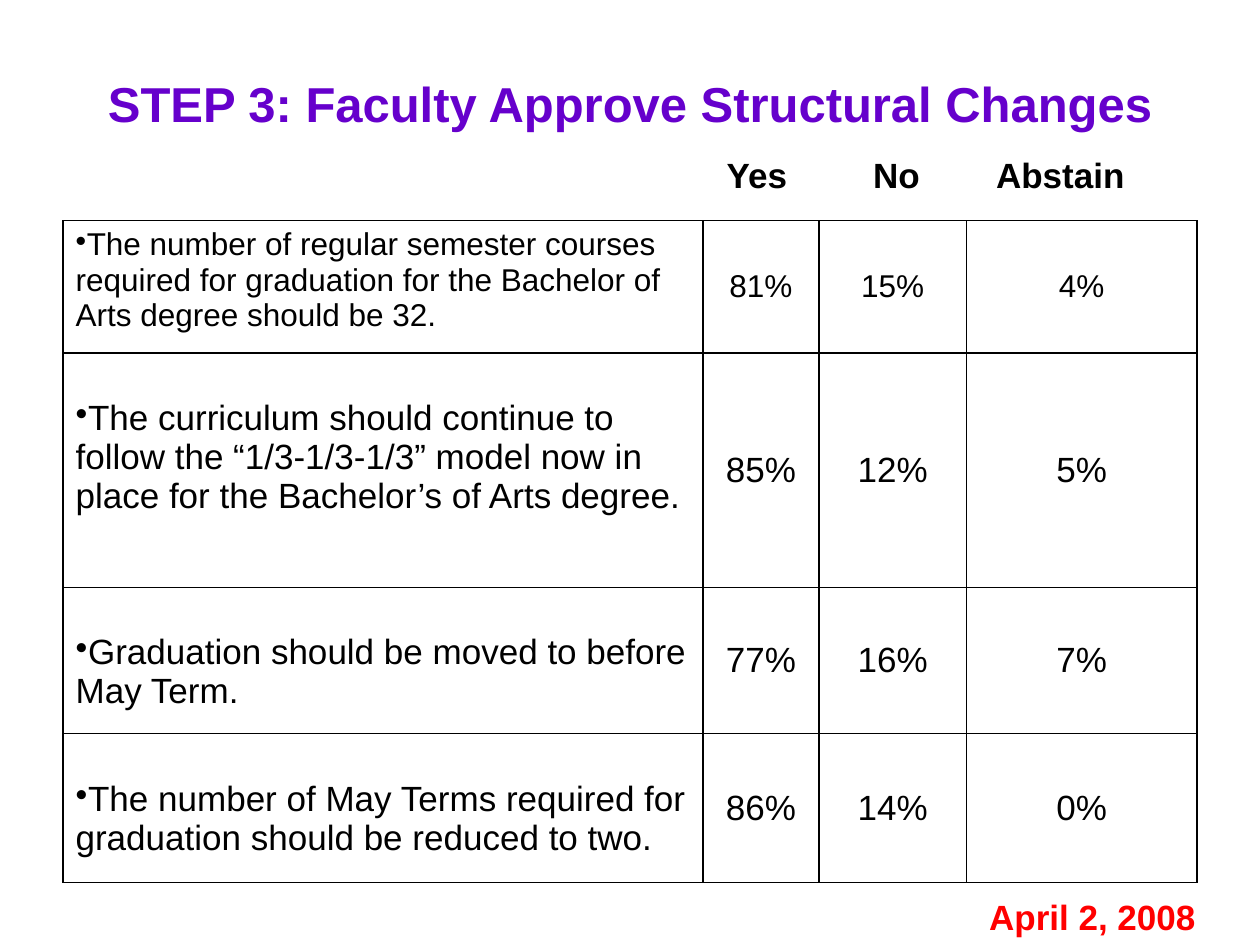
from dataclasses import dataclass

from lxml import etree
from pptx import Presentation
from pptx.dml.color import RGBColor
from pptx.enum.text import MSO_ANCHOR, PP_ALIGN
from pptx.oxml.ns import qn
from pptx.util import Cm, Pt

CENTER = PP_ALIGN.CENTER
MIDDLE = MSO_ANCHOR.MIDDLE
TOP = MSO_ANCHOR.TOP


@dataclass(frozen=True)
class Theme:
    font: str = "Arial"
    title: str = "6600CC"
    ink: str = "000000"
    date: str = "FF0000"
    paper: str = "FFFFFF"
    head: int = 28
    body: int = 20
    small: int = 18
    rule: int = 1


theme = Theme()


def write(para, text, size, color, bold=False):
    run = para.add_run()
    run.text = text
    run.font.name = theme.font
    run.font.size = Pt(size)
    run.font.bold = bold
    run.font.color.rgb = RGBColor.from_string(color)


def add_label(left, top, width, text, color):
    box = slide.shapes.add_textbox(Cm(left), Cm(top), Cm(width), Cm(1.11))
    box.text_frame.word_wrap = True
    para = box.text_frame.paragraphs[0]
    write(para, text, theme.body, color, True)
    return para


deck = Presentation()
deck.slide_width, deck.slide_height = Cm(25.4), Cm(19.05)
slide = deck.slides.add_slide(deck.slide_layouts[5])

# Title
title = slide.shapes.title
title.left, title.top, title.width, title.height = Cm(1.27), Cm(0.76), Cm(22.86), Cm(2.62)
title.text_frame.vertical_anchor = MIDDLE
para = title.text_frame.paragraphs[0]
para.alignment = CENTER
write(para, "STEP 3: Faculty Approve Structural Changes", theme.head, theme.title, True)

# Votes: motion, shares, type size, top margin of the motion, row height
votes = [
    ("The number of regular semester courses required for graduation "
     "for the Bachelor of Arts degree should be 32.",
     (81, 15, 4), theme.small, 0.13, 2.67),
    ("The curriculum should continue to follow the “1/3-1/3-1/3” model "
     "now in place for the Bachelor’s of Arts degree.",
     (85, 12, 5), theme.body, 0.92, 4.72),
    ("Graduation should be moved to before May Term.",
     (77, 16, 7), theme.body, 0.92, 2.95),
    ("The number of May Terms required for graduation should be reduced to two.",
     (86, 14, 0), theme.body, 0.92, 3),
]
widths = [12.9, 2.34, 2.97, 4.65]
frame = slide.shapes.add_table(len(votes), len(widths), Cm(1.27), Cm(4.45),
                               Cm(sum(widths)), Cm(sum(vote[-1] for vote in votes)))
table = frame.table
table.first_row = table.horz_banding = False
for col, width in zip(table.columns, widths):
    col.width = Cm(width)

for row, (motion, shares, size, gap, height) in zip(table.rows, votes):
    row.height = Cm(height)
    texts = [motion] + [f"{share}%" for share in shares]
    for col, (cell, text) in enumerate(zip(row.cells, texts)):
        para = cell.text_frame.paragraphs[0]
        write(para, text, size, theme.ink)
        if col == 0:
            cell.vertical_anchor = TOP
            cell.margin_top = Cm(gap)
            props = para._p.get_or_add_pPr()
            props.set("marL", "0")
            props.set("indent", "0")
            etree.SubElement(props, qn("a:buChar"), char="•")
        else:
            cell.vertical_anchor = MIDDLE
            para.alignment = CENTER

        # Cell borders come before the fill
        props = cell._tc.get_or_add_tcPr()
        for side in ("lnL", "lnR", "lnT", "lnB"):
            line = etree.SubElement(props, qn(f"a:{side}"), w=str(Pt(theme.rule)))
            fill = etree.SubElement(line, qn("a:solidFill"))
            etree.SubElement(fill, qn("a:srgbClr"), val=theme.ink)
        cell.fill.solid()
        cell.fill.fore_color.rgb = RGBColor.from_string(theme.paper)

# Column heads, set on tab stops
heads = add_label(14.4, 2.97, 8.59, "Yes\tNo\tAbstain", theme.ink)
tabs = etree.SubElement(heads._p.get_or_add_pPr(), qn("a:tabLst"))
for stop in (2.95, 5.43):
    etree.SubElement(tabs, qn("a:tab"), pos=str(Cm(stop)), algn="l")

# Date
add_label(19.69, 17.93, 4.7, "April 2, 2008", theme.date)

deck.save("out.pptx")
